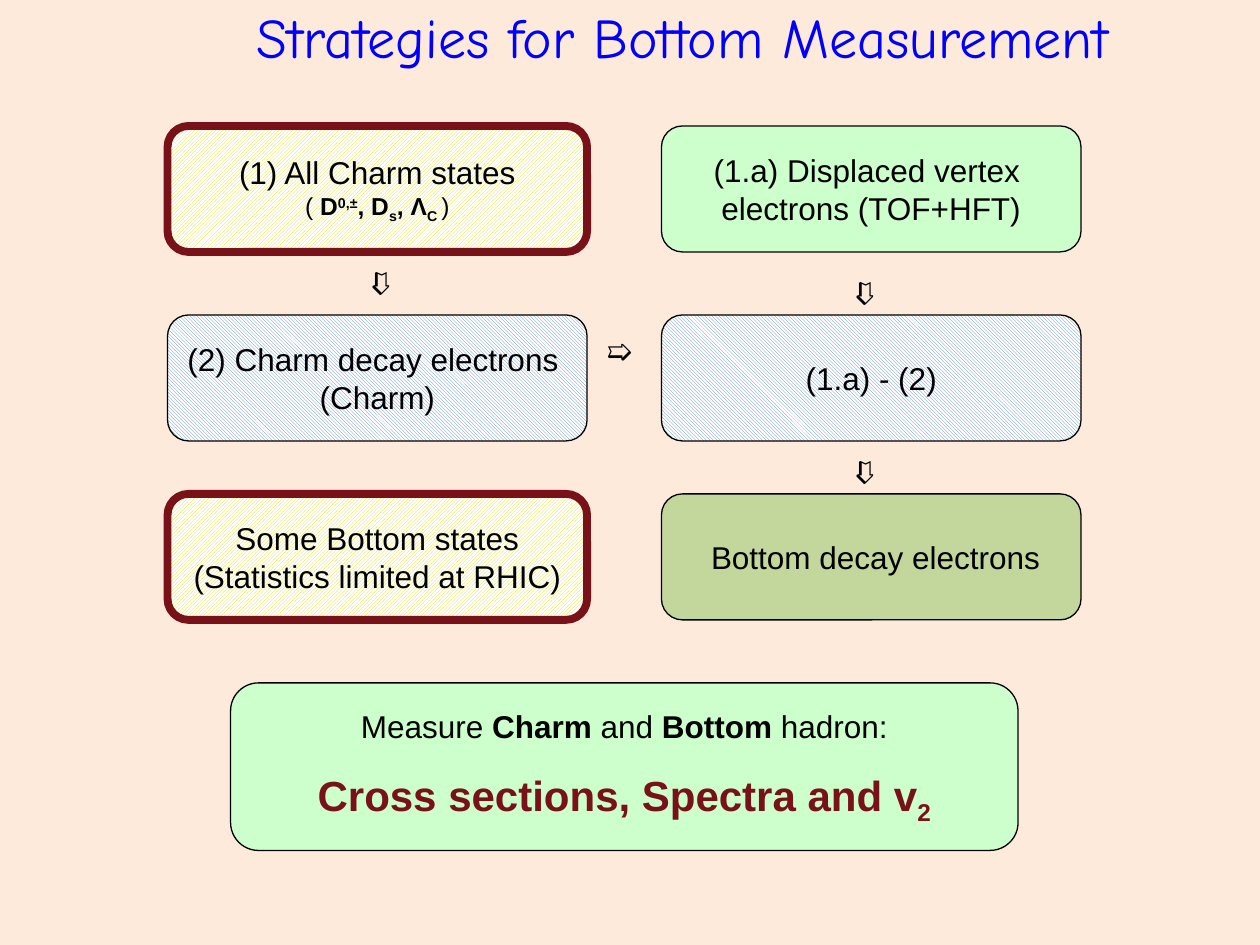
from dataclasses import dataclass

from pptx import Presentation
from pptx import util as u
from pptx.dml.color import RGBColor
from pptx.enum import dml, shapes, text


@dataclass(frozen=True)
class Theme:
    background: str = "FDEADA"
    title: str = "0000FF"
    ink: str = "000000"
    accent: str = "791118"
    mint: str = "CCFFCC"
    olive: str = "C3D69B"
    white: str = "FFFFFF"
    yellow: str = "E3DF1C"
    blue: str = "4F81BD"
    title_font: str = "Comic Neue"
    body_font: str = "Arial"
    title_size: int = 32
    result_size: int = 24
    body_size: int = 18
    detail_size: int = 14
    thin: float = 0.75
    thick: float = 4.5


THEME = Theme()
SUPERSCRIPT, SUBSCRIPT = 30000, -25000


@dataclass(frozen=True)
class Run:
    text: str
    bold: bool = False
    baseline: int = 0


@dataclass(frozen=True)
class Line:
    runs: tuple
    size: int = THEME.body_size
    color: str = THEME.ink
    space_before: float = 0


@dataclass(frozen=True)
class Hatch:
    pattern: dml.MSO_PATTERN
    color: str


def plain(*lines):
    return [Line((Run(line),)) for line in lines]


class SlideBuilder:
    def __init__(self, slide, theme):
        self.slide = slide
        self.theme = theme
        background = slide.background.fill
        background.solid()
        background.fore_color.rgb = RGBColor.from_string(theme.background)

    def style_font(self, font, size, color, name):
        font.size = u.Pt(size)
        font.name = name
        font.color.rgb = RGBColor.from_string(color)

    def title(self, wording, left, top, width, height):
        title = self.slide.shapes.title
        title.left, title.top = u.Inches(left), u.Inches(top)
        title.width, title.height = u.Inches(width), u.Inches(height)
        frame = title.text_frame
        frame.text = wording
        frame.auto_size = text.MSO_AUTO_SIZE.NONE
        frame.vertical_anchor = text.MSO_ANCHOR.MIDDLE
        heading = frame.paragraphs[0]
        heading.alignment = text.PP_ALIGN.CENTER
        self.style_font(heading.font, self.theme.title_size,
                        self.theme.title, self.theme.title_font)

    def paint(self, fill, paint):
        """Apply a Hatch, or a plain colour."""
        if isinstance(paint, Hatch):
            fill.patterned()
            fill.pattern = paint.pattern
            fill.fore_color.rgb = RGBColor.from_string(paint.color)
            fill.back_color.rgb = RGBColor.from_string(self.theme.white)
        else:
            fill.solid()
            fill.fore_color.rgb = RGBColor.from_string(paint)

    def add_lines(self, frame, lines):
        for index, line in enumerate(lines):
            paragraph = frame.paragraphs[0] if index == 0 else frame.add_paragraph()
            paragraph.alignment = text.PP_ALIGN.CENTER
            paragraph.space_before = u.Pt(line.space_before)
            self.style_font(paragraph.font, line.size, line.color,
                            self.theme.body_font)
            same_weight = len({part.bold for part in line.runs}) == 1
            if same_weight:
                paragraph.font.bold = line.runs[0].bold
            for part in line.runs:
                run = paragraph.add_run()
                run.text = part.text
                if not same_weight:
                    run.font.bold = part.bold
                if part.baseline:
                    run._r.get_or_add_rPr().set("baseline", str(part.baseline))

    def box(self, lines, left, top, width, height, paint, emphasized=False):
        box = self.slide.shapes.add_shape(
            shapes.MSO_SHAPE.ROUNDED_RECTANGLE,
            u.Inches(left), u.Inches(top), u.Inches(width), u.Inches(height))
        box.shadow.inherit = False
        self.paint(box.fill, paint)
        outline = self.theme.accent if emphasized else self.theme.ink
        box.line.color.rgb = RGBColor.from_string(outline)
        box.line.width = u.Pt(self.theme.thick if emphasized else self.theme.thin)
        frame = box.text_frame
        frame.word_wrap = False
        frame.vertical_anchor = text.MSO_ANCHOR.MIDDLE
        self.add_lines(frame, lines)

    def arrow(self, left, top, rotation=0):
        arrow = self.slide.shapes.add_textbox(
            u.Inches(left), u.Inches(top), u.Inches(0.49), u.Inches(0.5))
        arrow.rotation = rotation
        arrow.text_frame.word_wrap = False
        arrow.text_frame.auto_size = text.MSO_AUTO_SIZE.SHAPE_TO_FIT_TEXT
        self.add_lines(arrow.text_frame, plain("➯"))


def main():
    deck = Presentation()
    deck.slide_width, deck.slide_height = u.Inches(10), u.Inches(7.5)
    builder = SlideBuilder(deck.slides.add_slide(deck.slide_layouts[5]), THEME)
    builder.title("Strategies for Bottom Measurement", 1.17, 0, 8.5, 0.58)

    states = Hatch(dml.MSO_PATTERN.LIGHT_UPWARD_DIAGONAL, THEME.yellow)
    electrons = Hatch(dml.MSO_PATTERN.LIGHT_DOWNWARD_DIAGONAL, THEME.blue)
    charm_states = plain("(1) All Charm states") + [Line((
        Run("( "), Run("D", True), Run("0,±", True, SUPERSCRIPT),
        Run(", D", True), Run("s", True, SUBSCRIPT), Run(", Λ", True),
        Run("C ", True, SUBSCRIPT), Run(")")), THEME.detail_size)]

    columns, rows = (1.33, 5.25), (1, 2.5, 3.92)
    strategies = [
        (1, 0, plain("(1.a) Displaced vertex ", "electrons (TOF+HFT)"), THEME.mint),
        (0, 0, charm_states, states),
        (0, 1, plain("(2) Charm decay electrons ", "(Charm)"), electrons),
        (1, 1, plain("(1.a) - (2)"), electrons),
        (1, 2, plain(" Bottom decay electrons"), THEME.olive),
        (0, 2, plain(" Some Bottom states ", "(Statistics limited at RHIC)"), states),
    ]
    for column, row, lines, paint in strategies:
        builder.box(lines, columns[column], rows[row], 3.33, 1, paint,
                    emphasized=paint is states)

    goal = [
        Line((Run("Measure "), Run("Charm", True), Run(" and "),
              Run("Bottom", True), Run(" hadron:"))),
        Line((Run("Cross sections, Spectra and v", True),
              Run("2", True, SUBSCRIPT)),
             THEME.result_size, THEME.accent, space_before=14),
    ]
    builder.box(goal, 1.83, 5.42, 6.25, 1.33, THEME.mint)

    builder.arrow(4.67, 2.58)
    for left, top in ((6.59, 3.5), (2.75, 2), (6.59, 2.08)):
        builder.arrow(left, top, rotation=90)

    deck.save("out.pptx")


if __name__ == "__main__":
    main()
